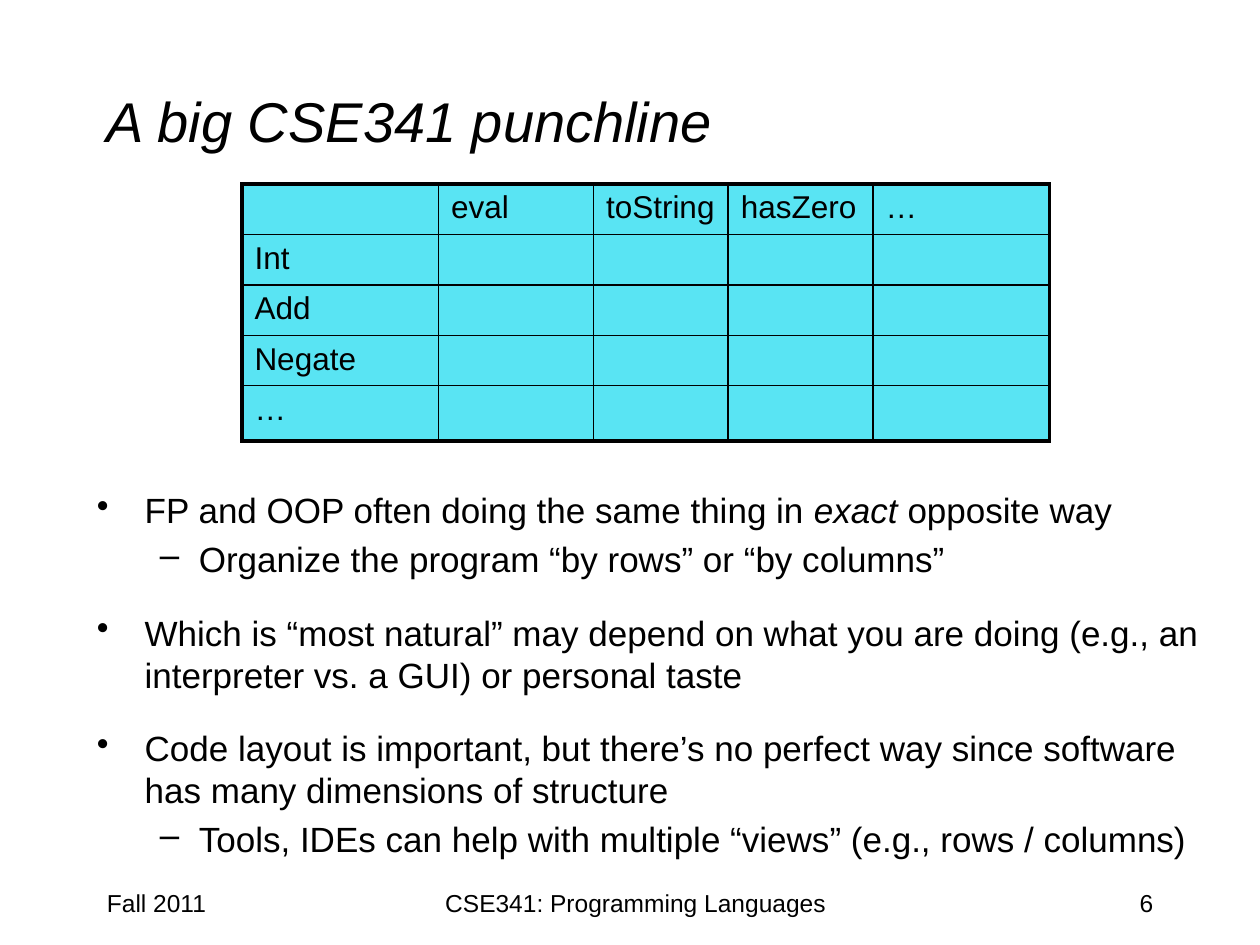
import pptx
import pptx.dml.color
import pptx.enum.text
import pptx.oxml
import pptx.oxml.ns
import pptx.util
from lxml import etree

Inches, Pt = pptx.util.Inches, pptx.util.Pt
ALIGN, ANCHOR = pptx.enum.text.PP_ALIGN, pptx.enum.text.MSO_ANCHOR
FONT, BLACK, CYAN = "Arial", "000000", "59E4F3"

# Content
TITLE = "A big CSE341 punchline"
OPERATIONS = ["eval", "toString", "hasZero", "…"]
VARIANTS = ["Int", "Add", "Negate", "…"]
COLUMN_WIDTHS = [1.56, 1.23, 1.07, 1.15, 1.4]
ROW_HEIGHTS = [0.38] * 4 + [0.44]
# (level, space before in points, [(text, italic), ...])
POINTS = [
    (0, 1, [("FP and OOP often doing the same thing in ", False), ("exact", True),
            (" opposite way", False)]),
    (1, 4, [("Organize the program “by rows” or “by columns”", False)]),
    (0, 18, [("Which is “most natural” may depend on what you are doing (e.g., an "
              "interpreter vs. a GUI) or personal taste", False)]),
    (0, 18, [("Code layout is important, but there’s no perfect way since software "
              "has many dimensions of structure", False)]),
    (1, 4, [("Tools, IDEs can help with multiple “views” (e.g., rows / columns)", False)]),
]
BULLETS = [("•", 0.38, -0.38), ("–", 0.81, -0.31)]  # mark, margin, indent by level
FOOTER = [  # text, left, width, alignment
    ("Fall 2011", 0.75, 2.08, ALIGN.LEFT),
    ("CSE341: Programming Languages", 3.17, 3.75, ALIGN.CENTER),
    ("6", 7.17, 2.08, ALIGN.RIGHT),
]


def color(hex_string):
    return pptx.dml.color.RGBColor.from_string(hex_string)


def format_run(run, size, italic=False):
    run.font.name, run.font.size, run.font.italic = FONT, Pt(size), italic
    run.font.color.rgb = color(BLACK)


def add_text_frame(slide, left, top, width, height):
    box = slide.shapes.add_textbox(Inches(left), Inches(top), Inches(width), Inches(height))
    box.text_frame.word_wrap = True
    return box.text_frame


def add_line(slide, text, area, size, alignment=ALIGN.LEFT, anchor=ANCHOR.TOP, italic=False):
    text_frame = add_text_frame(slide, *area)
    text_frame.text = text
    text_frame.vertical_anchor = anchor
    paragraph = text_frame.paragraphs[0]
    paragraph.alignment = alignment
    format_run(paragraph.runs[0], size, italic)


def set_bullet(paragraph, mark, margin, indent):
    properties = paragraph._p.get_or_add_pPr()
    properties.set("marL", str(Inches(margin)))
    properties.set("indent", str(Inches(indent)))
    bullet = etree.SubElement(properties, pptx.oxml.ns.qn("a:buChar"))
    bullet.set("char", mark)


def set_borders(cell, widths):
    properties = cell._tc.get_or_add_tcPr()
    for position, (side, width) in enumerate(widths.items()):
        properties.insert(position, pptx.oxml.parse_xml(
            f'<a:ln{side} {pptx.oxml.ns.nsdecls("a")} w="{Pt(width)}"><a:solidFill>'
            f'<a:srgbClr val="{BLACK}"/></a:solidFill></a:ln{side}>'))


def add_grid(slide, left, top):
    rows = [[""] + OPERATIONS] + [[name] + [""] * len(OPERATIONS) for name in VARIANTS]
    last_row, last_column = len(rows) - 1, len(COLUMN_WIDTHS) - 1
    table = slide.shapes.add_table(
        len(rows), len(COLUMN_WIDTHS), Inches(left), Inches(top),
        Inches(sum(COLUMN_WIDTHS)), Inches(sum(ROW_HEIGHTS))).table
    table.first_row = table.horz_banding = False
    for column, width in zip(table.columns, COLUMN_WIDTHS):
        column.width = Inches(width)
    for row, height in zip(table.rows, ROW_HEIGHTS):
        row.height = Inches(height)
    for i, row in enumerate(rows):
        for j, text in enumerate(row):
            cell = table.cell(i, j)
            cell.fill.solid()
            cell.fill.fore_color.rgb = color(CYAN)
            # Thick outer frame, thin inner lines
            edges = {"L": j == 0, "R": j == last_column, "T": i == 0, "B": i == last_row}
            set_borders(cell, {side: 2.25 if outer else 1 for side, outer in edges.items()})
            if text:
                cell.text_frame.text = text
                format_run(cell.text_frame.paragraphs[0].runs[0], 18)


def add_points(slide, area):
    text_frame = add_text_frame(slide, *area)
    for index, (level, space, parts) in enumerate(POINTS):
        paragraph = text_frame.add_paragraph() if index else text_frame.paragraphs[0]
        paragraph.level = level
        paragraph.line_spacing = Pt(24)
        paragraph.space_before = Pt(space)
        set_bullet(paragraph, *BULLETS[level])
        for text, italic in parts:
            run = paragraph.add_run()
            run.text = text
            format_run(run, 20, italic)


def main():
    presentation = pptx.Presentation()
    presentation.slide_width, presentation.slide_height = Inches(10), Inches(7.5)
    slide = presentation.slides.add_slide(presentation.slide_layouts[6])
    add_line(slide, TITLE, (0.75, 0.33, 8.5, 1.25), 32, anchor=ANCHOR.MIDDLE, italic=True)
    add_points(slide, (0.67, 3.83, 9, 3.08))
    for text, left, width, alignment in FOOTER:
        add_line(slide, text, (left, 7, width, 0.5), 14, alignment)
    add_grid(slide, 1.92, 1.46)
    presentation.save("out.pptx")


if __name__ == "__main__":
    main()
